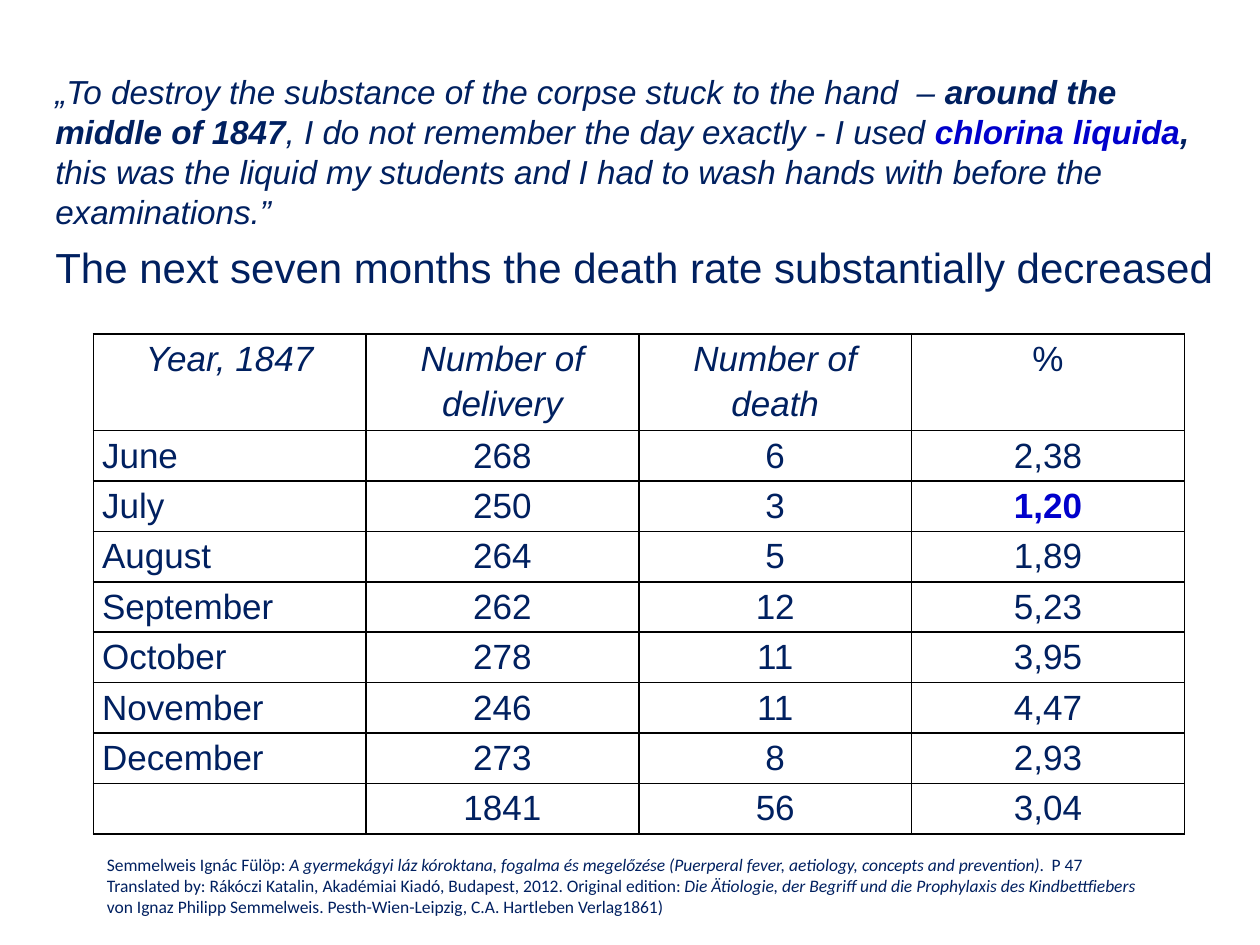
from lxml import etree
from pptx import Presentation, util as u
from pptx.dml.color import RGBColor
from pptx.enum import text
from pptx.oxml.ns import qn

NAVY = RGBColor(0x00, 0x20, 0x60)
BLUE = RGBColor(0x00, 0x00, 0xCC)
BLACK = RGBColor(0x00, 0x00, 0x00)

prs = Presentation()
prs.slide_width, prs.slide_height = u.Inches(10), u.Inches(7.5)
slide = prs.slides.add_slide(prs.slide_layouts[6])


def style(paragraph, size, face, italic=False):
    font = paragraph.font
    font.size, font.name, font.italic = u.Pt(size), face, italic
    font.color.rgb = NAVY


def add_border(cell):
    props = cell._tc.get_or_add_tcPr()
    for side in ("a:lnL", "a:lnR", "a:lnT", "a:lnB"):
        line = etree.SubElement(props, qn(side), w=str(u.Pt(1)))
        fill = etree.SubElement(line, qn("a:solidFill"))
        etree.SubElement(fill, qn("a:srgbClr"), val=str(BLACK))


# Quotation and the statement below it
quotation = slide.shapes.add_textbox(
    u.Inches(0.34), u.Inches(0.52), u.Inches(9.45), u.Inches(1.87)).text_frame
quotation.word_wrap = True
quote = quotation.paragraphs[0]
quote.space_after = u.Pt(6)
style(quote, 19, "Arial", italic=True)
for words, bold, color in [
    ("„To destroy the substance of the corpse stuck to the hand  – ", False, NAVY),
    ("around the middle of 1847", True, NAVY),
    (", I do not remember the day exactly - I used ", False, NAVY),
    ("chlorina liquida", True, BLUE),
    (",", True, NAVY),
    (" this was the liquid my students and I had to wash hands with "
     "before the examinations.”", False, NAVY),
]:
    run = quote.add_run()
    run.text, run.font.bold = words, bold
    run.font.color.rgb = color

statement = quotation.add_paragraph()
statement.text = "The next seven months the death rate substantially decreased"
style(statement, 24, "Arial")

# Monthly deliveries and deaths
months = [
    ("Year, 1847", "Number of delivery", "Number of death", "%"),
    ("June", "268", "6", "2,38"),
    ("July", "250", "3", "1,20"),
    ("August", "264", "5", "1,89"),
    ("September", "262", "12", "5,23"),
    ("October", "278", "11", "3,95"),
    ("November", "246", "11", "4,47"),
    ("December", "273", "8", "2,93"),
    ("", "1841", "56", "3,04"),
]
HEAD_HEIGHT, ROW_HEIGHT = u.Inches(0.71), u.Inches(0.4)
deaths = slide.shapes.add_table(
    len(months), len(months[0]), u.Inches(0.74), u.Inches(2.65),
    u.Inches(8.66), HEAD_HEIGHT + ROW_HEIGHT * (len(months) - 1)).table
deaths.first_row = deaths.horz_banding = False

for r, values in enumerate(months):
    deaths.rows[r].height = ROW_HEIGHT if r else HEAD_HEIGHT
    for c, value in enumerate(values):
        cell = deaths.cell(r, c)
        add_border(cell)
        cell.fill.background()
        cell.margin_left = cell.margin_right = u.Inches(0.07)
        cell.margin_top = cell.margin_bottom = 0
        cell.text = value
        entry = cell.text_frame.paragraphs[0]
        entry.line_spacing = 1.15
        left = r > 0 and c == 0
        entry.alignment = text.PP_ALIGN.LEFT if left else text.PP_ALIGN.CENTER
        style(entry, 20, "Arial", italic=r == 0 and value != "%")
        if value == "1,20":  # lowest death rate
            entry.font.bold = True
            entry.font.color.rgb = BLUE

# Source: each line is a list of (words, italic)
source_lines = [
    [("Semmelweis Ignác Fülöp: ", False),
     ("A gyermekágyi láz kóroktana, fogalma és megelőzése "
      "(Puerperal fever, aetiology, concepts and prevention)", True),
     (".  P 47", False)],
    [("Translated by: Rákóczi Katalin, Akadémiai Kiadó, Budapest, 2012. "
      "Original edition: ", False),
     ("Die Ätiologie, der Begriff und die Prophylaxis des Kindbettfiebers", True)],
    [("von Ignaz Philipp Semmelweis. Pesth-Wien-Leipzig, "
      "C.A. Hartleben Verlag1861)", False)],
]
source = slide.shapes.add_textbox(
    u.Inches(0.75), u.Inches(6.73), u.Inches(9.28), u.Inches(0.61)).text_frame
source.word_wrap = True
for i, parts in enumerate(source_lines):
    line = source.add_paragraph() if i else source.paragraphs[0]
    style(line, 10, "Calibri")
    for words, italic in parts:
        run = line.add_run()
        run.text, run.font.italic = words, italic

prs.save("out.pptx")
